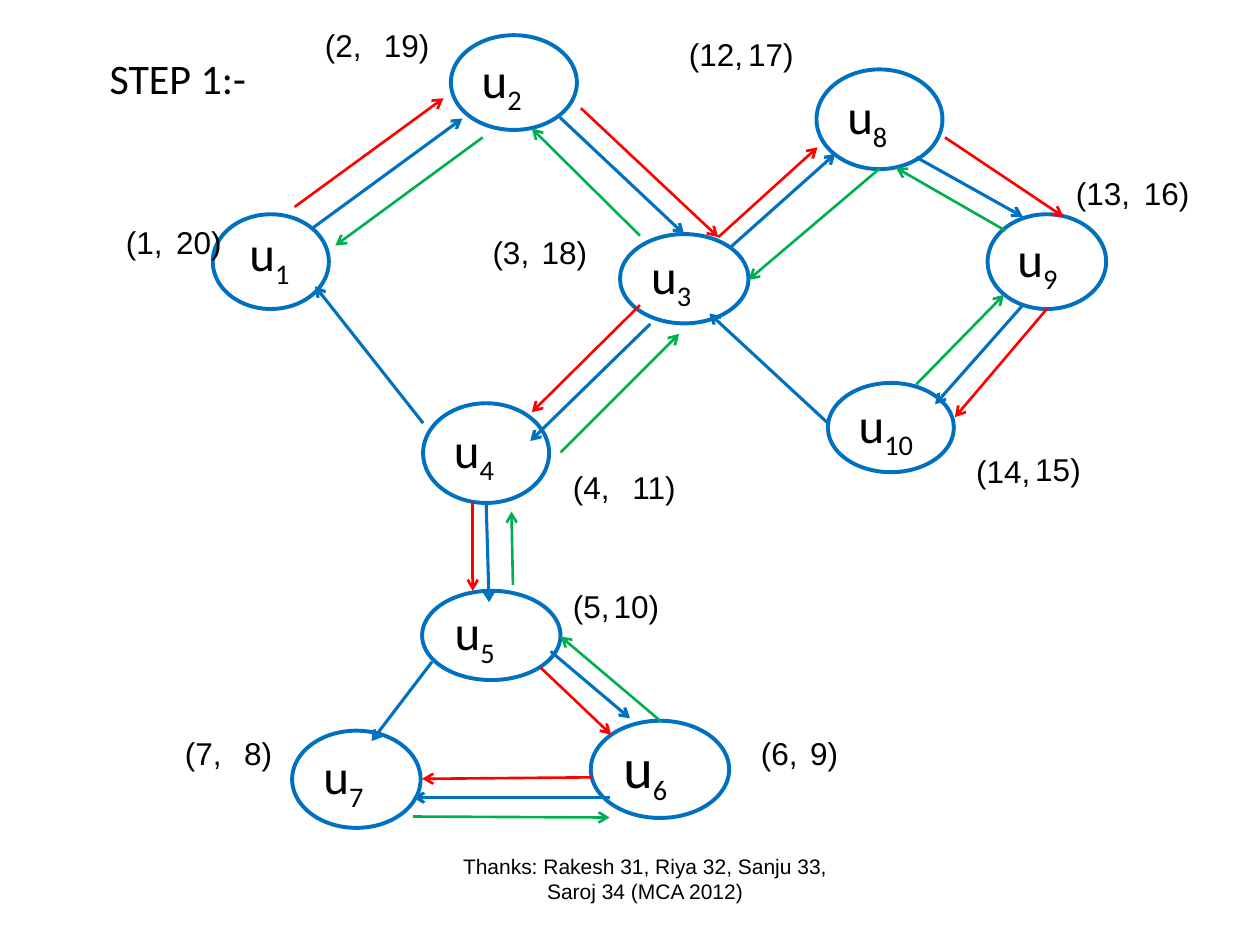
"""Build the slide that shows step 1 of a depth-first walk with entry and exit times."""
from lxml.etree import SubElement
from pptx import Presentation
from pptx.dml.color import RGBColor
from pptx.enum.shapes import MSO_CONNECTOR as Connector, MSO_SHAPE as Shape
from pptx.enum.text import MSO_ANCHOR as Anchor, PP_ALIGN as Align
from pptx.oxml.ns import qn
from pptx.util import Cm, Pt

COLORS = {"blue": "0070C0", "red": "FF0000", "green": "00B050",
          "black": "000000", "white": "FFFFFF"}
CM_PER_INCH = 2.54

NODES = {
    "1": (1.69, 1.7, 0.92, 0.75),
    "2": (3.58, 0.28, 1, 0.75),
    "3": (4.92, 1.86, 1.02, 0.71),
    "4": (3.36, 3.2, 1, 0.79),
    "5": (3.35, 4.69, 1.1, 0.71),
    "6": (4.69, 5.72, 1.1, 0.77),
    "7": (2.32, 5.8, 1.02, 0.77),
    "8": (6.48, 0.55, 1, 0.79),
    "9": (7.84, 1.7, 0.94, 0.75),
    "10": (6.57, 3.04, 1, 0.71),
}
LETTER_SIZES = {"6": 32}
FIRST_NODE_TEXT = (1.88, 1.72, 0.92, 0.57)

WIDTHS = {"blue": 1.75, "red": 1.5, "green": 1.5}
ARROWS = {
    "blue": [
        (2.48, 1.81, 3.67, 0.94), (3.36, 3.36, 2.5, 2.27),
        (4.44, 0.93, 5.43, 1.86), (5.16, 2.57, 4.21, 3.5),
        (5.8, 1.96, 6.63, 1.22), (7.27, 1.25, 8.12, 1.72),
        (8.12, 2.42, 7.42, 3.21), (6.57, 3.36, 5.63, 2.49),
        (3.86, 3.99, 3.88, 4.78), (3.43, 5.25, 2.95, 5.88),
        (4.37, 5.17, 5, 5.7), (4.84, 6.33, 3.28, 6.33),
    ],
    "red": [
        (2.34, 1.64, 3.52, 0.78), (4.61, 0.86, 5.7, 1.88),
        (5.08, 2.42, 4.22, 3.27), (3.75, 3.98, 3.75, 4.69),
        (4.29, 5.3, 4.85, 5.83), (4.7, 6.17, 3.35, 6.18),
        (5.7, 1.88, 6.49, 1.17), (7.5, 1.09, 8.44, 1.72),
        (8.31, 2.45, 7.58, 3.31),
    ],
    "green": [
        (3.83, 1.09, 2.66, 1.95), (5.08, 1.87, 4.22, 1.02),
        (4.45, 3.59, 5.39, 2.65), (4.07, 4.64, 4.06, 4.06),
        (5.24, 5.72, 4.45, 5.05), (3.28, 6.48, 4.84, 6.49),
        (6.98, 1.34, 5.94, 2.22), (7.98, 1.83, 7.11, 1.33),
        (7.27, 3.05, 7.97, 2.34),
    ],
}

TIMES = [
    ("(1,", 0.9, 1.72), ("20)", 1.3, 1.72),
    ("(2,", 2.48, 0.16), ("19)", 2.95, 0.16),
    ("(3,", 3.81, 1.8), ("18)", 4.2, 1.8),
    ("(4,", 4.45, 3.67), ("11)", 4.92, 3.67),
    ("(5,", 4.45, 4.61), ("10)", 4.77, 4.61),
    ("(6,", 5.94, 5.78), ("9)", 6.33, 5.78),
    ("(7,", 1.37, 5.78), ("8)", 1.84, 5.78),
    ("(12,", 5.37, 0.23), ("17)", 5.84, 0.23),
    ("(13,", 8.44, 1.33), ("16)", 8.98, 1.33),
    ("(14,", 7.65, 3.54), ("15)", 8.12, 3.52),
]
TIME_SIZE = (0.8, 0.4)
TITLE = ("STEP 1:-", (0.55, 0.23, 1.72, 0.78))
THANKS = ("Thanks: Rakesh 31, Riya 32, Sanju 33, Saroj 34 (MCA 2012)",
          (3.52, 6.68, 3.2, 0.58))


def lengths(values):
    return [Cm(round(value * CM_PER_INCH, 2)) for value in values]


def color(name):
    return RGBColor.from_string(COLORS[name])


def write(box, text, font="Arial", size=18, align=Align.LEFT, anchor=Anchor.TOP,
          subscript=None, subscript_size=28):
    frame = box.text_frame
    frame.word_wrap = True
    frame.vertical_anchor = anchor
    para = frame.paragraphs[0]
    para.alignment = align
    pieces = [(text, size, None)]
    if subscript:
        pieces.append((subscript, subscript_size, "-25000"))
    for piece, points, baseline in pieces:
        span = para.add_run()
        span.text = piece
        span.font.name = font
        span.font.size = Pt(points)
        span.font.color.rgb = color("black")
        if baseline:
            span.font._element.set("baseline", baseline)


def add_outlined(slide, kind, place, line, width):
    shape = slide.shapes.add_shape(kind, *lengths(place))
    shape.shadow.inherit = False
    shape.fill.solid()
    shape.fill.fore_color.rgb = color("white")
    shape.line.color.rgb = color(line)
    shape.line.width = Pt(width)
    return shape


def add_text_box(slide, place):
    return slide.shapes.add_textbox(*lengths(place))


def add_arrow(slide, ends, name):
    arrow = slide.shapes.add_connector(Connector.STRAIGHT, *lengths(ends))
    arrow.line.color.rgb = color(name)
    arrow.line.width = Pt(WIDTHS[name])
    SubElement(arrow.line._get_or_add_ln(), qn("a:tailEnd"), type="arrow")
    SubElement(arrow._element.spPr, qn("a:effectLst"))


def main():
    deck = Presentation()
    deck.slide_width, deck.slide_height = lengths((10, 7.5))
    slide = deck.slides.add_slide(deck.slide_layouts[6])

    for number, place in NODES.items():
        node = add_outlined(slide, Shape.OVAL, place, "blue", 2.25)
        is_first = number == "1"
        holder = add_text_box(slide, FIRST_NODE_TEXT) if is_first else node
        write(holder, "u", font="Calibri", size=LETTER_SIZES.get(number, 28),
              anchor=Anchor.TOP if is_first else Anchor.MIDDLE, subscript=number)

    for name, arrows in ARROWS.items():
        for ends in arrows:
            add_arrow(slide, ends, name)

    for text, left, top in TIMES:
        write(add_text_box(slide, (left, top, *TIME_SIZE)), text)

    text, place = TITLE
    write(add_outlined(slide, Shape.RECTANGLE, place, "white", 2), text,
          font="Calibri", size=24, align=Align.CENTER, anchor=Anchor.MIDDLE)
    text, place = THANKS
    write(add_text_box(slide, place), text, size=12, align=Align.CENTER,
          anchor=Anchor.MIDDLE)

    deck.save("out.pptx")


if __name__ == "__main__":
    main()
